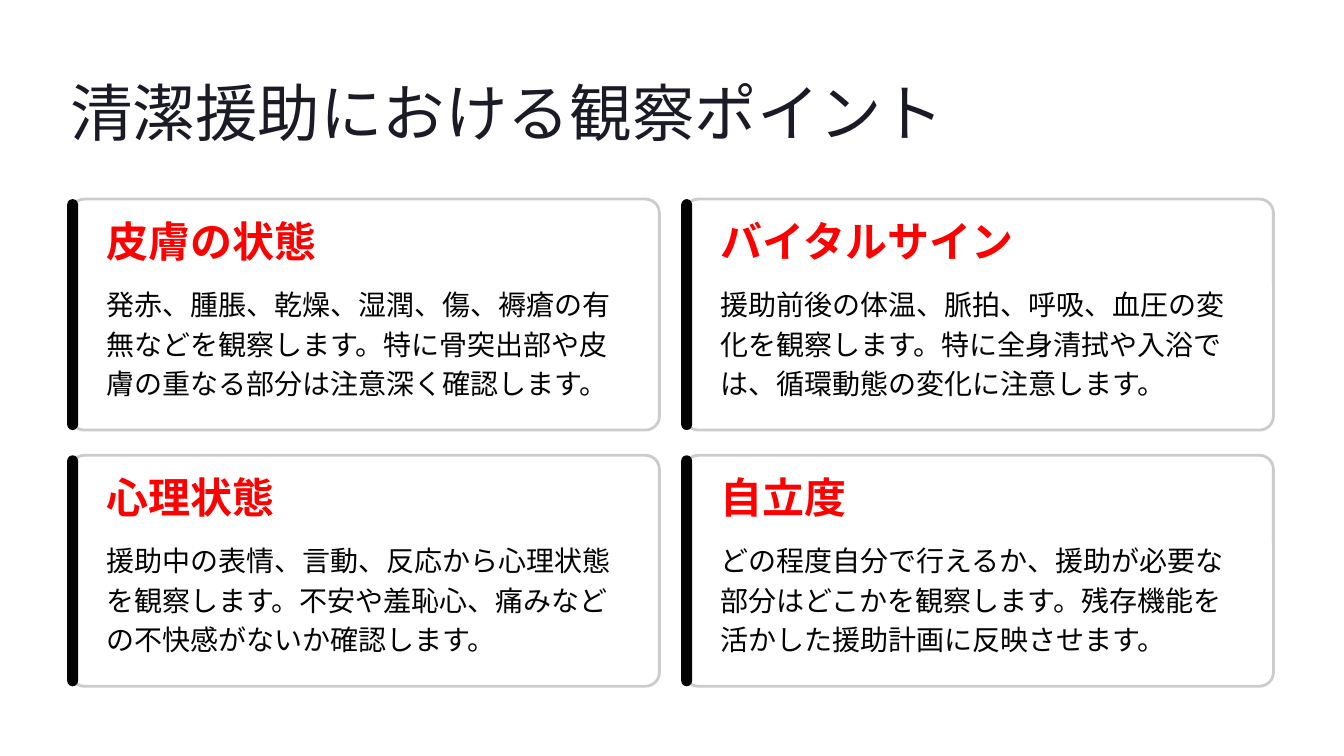
from lxml.etree import SubElement
from pptx import Presentation
from pptx.dml.color import RGBColor
from pptx.enum.lang import MSO_LANGUAGE_ID
from pptx.enum.shapes import MSO_SHAPE
from pptx.enum.text import MSO_ANCHOR, MSO_AUTO_SIZE, PP_ALIGN
from pptx.oxml.ns import qn
from pptx.util import Pt

PX = 9144  # 100 px to the inch
COLORS = {
    "title": "1B1B27",
    "head": "FF0000",
    "ink": "030303",
    "card": "FFFFFF",
    "edge": "CCCCCC",
}
CARDS = [
    ("皮膚の状態",
     "発赤、腫脹、乾燥、湿潤、傷、褥瘡の有無などを観察します。"
     "特に骨突出部や皮膚の重なる部分は注意深く確認します。"),
    ("バイタルサイン",
     "援助前後の体温、脈拍、呼吸、血圧の変化を観察します。"
     "特に全身清拭や入浴では、循環動態の変化に注意します。"),
    ("心理状態",
     "援助中の表情、言動、反応から心理状態を観察します。"
     "不安や羞恥心、痛みなどの不快感がないか確認します。"),
    ("自立度",
     "どの程度自分で行えるか、援助が必要な部分はどこかを観察します。"
     "残存機能を活かした援助計画に反映させます。"),
]


def color(name):
    return RGBColor.from_string(COLORS[name])


def emu(*box):
    return [n * PX for n in box]


def set_text(shape, text, face, size, lead, tone, bold=False, wrap=False):
    frame = shape.text_frame
    frame.text = text
    frame.word_wrap = wrap
    frame.auto_size = MSO_AUTO_SIZE.NONE
    frame.vertical_anchor = MSO_ANCHOR.TOP
    frame.margin_left = frame.margin_right = 0
    frame.margin_top = frame.margin_bottom = 0
    para = frame.paragraphs[0]
    para.alignment = PP_ALIGN.LEFT
    para.line_spacing = Pt(lead)
    para.space_before = Pt(0)
    font = para.runs[0].font
    font.size = Pt(size)
    font.bold = bold
    font.color.rgb = color(tone)
    font.name = face
    font.language_id = MSO_LANGUAGE_ID.JAPANESE
    # East Asian typeface
    SubElement(font._element, qn("a:ea"), typeface=face)


def add_title(slide, text):
    title = slide.shapes.title
    title.left, title.top, title.width, title.height = emu(84, 84, 1047, 93)
    set_text(title, text, "Inter", 53.5, 67, "title")


def add_label(slide, box, *style, **flags):
    set_text(slide.shapes.add_textbox(*emu(*box)), *style, **flags)


def add_round(slide, box, curve, tone):
    shape = slide.shapes.add_shape(MSO_SHAPE.ROUNDED_RECTANGLE, *emu(*box))
    shape.adjustments[0] = curve
    shape.shadow.inherit = False
    shape.fill.solid()
    shape.fill.fore_color.rgb = color(tone)
    shape.line.fill.background()
    return shape


def add_card(slide, x, y, head, body):
    # Panel, slightly transparent
    panel = add_round(slide, (x + 4, y, 701, 275), 0.06, "card")
    panel.line.color.rgb = color("edge")
    panel.line.width = Pt(2.4)
    fill = panel._element.spPr.find(qn("a:solidFill"))
    SubElement(fill[0], qn("a:alpha"), val="95000")
    # Accent bar
    add_round(slide, (x, y, 13, 275), 0.94, "ink")
    # Heading and text
    add_label(slide, (x + 47, y + 33, 374, 47),
              head, "Inter", 36, 33.5, "head", bold=True)
    add_label(slide, (x + 47, y + 98, 625, 144),
              body, "Karla", 24, 34, "ink", wrap=True)


def main():
    deck = Presentation()
    deck.slide_width, deck.slide_height = emu(1600, 900)
    slide = deck.slides.add_slide(deck.slide_layouts[5])
    add_title(slide, "清潔援助における観察ポイント")
    # Two by two grid
    for i, (head, body) in enumerate(CARDS):
        row, col = divmod(i, 2)
        add_card(slide, 80 + col * 731, 237 + row * 305, head, body)
    deck.save("out.pptx")


if __name__ == "__main__":
    main()
